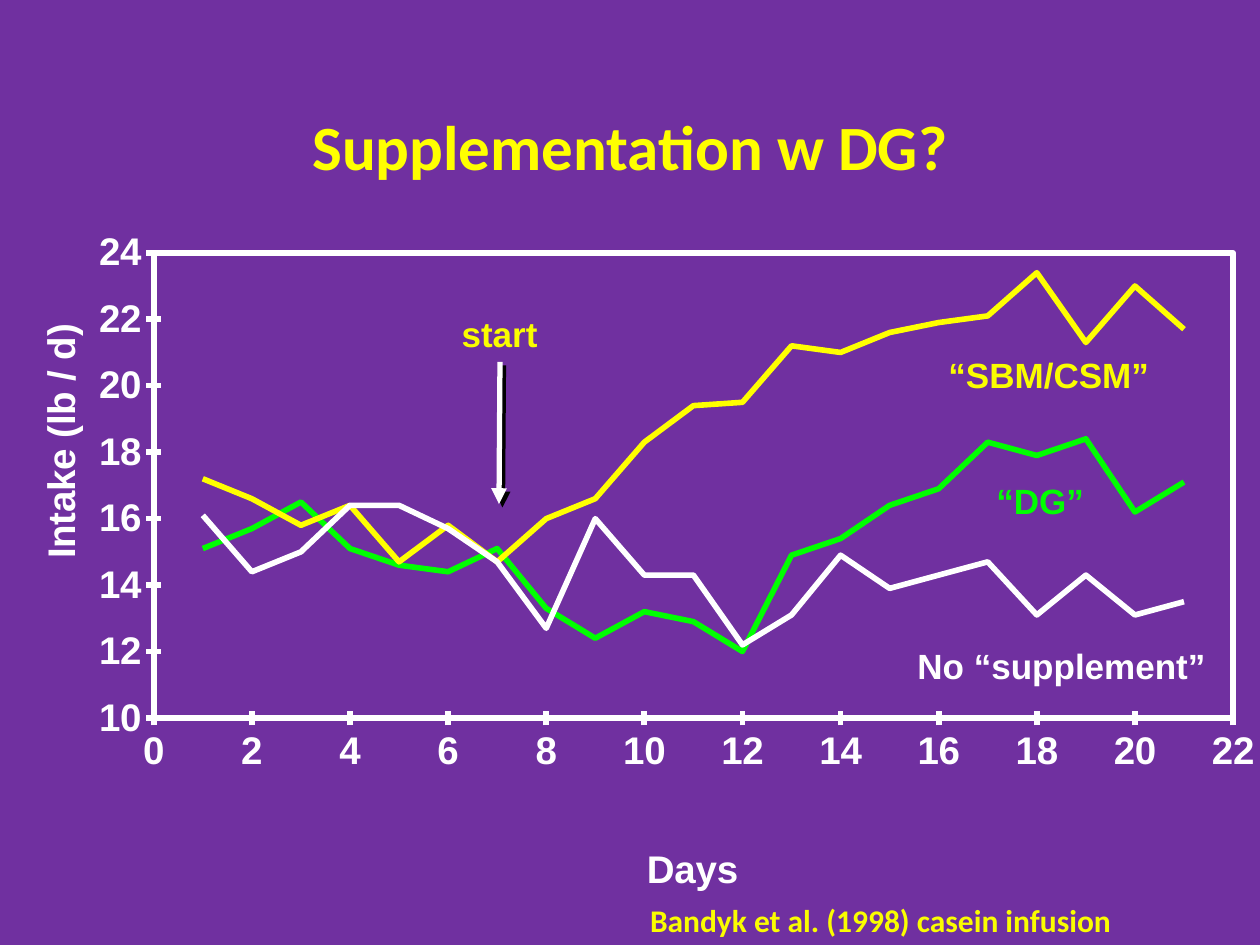
from lxml import etree
from pptx import Presentation
from pptx import util as u
from pptx.chart.data import XyChartData
from pptx.dml.color import RGBColor
from pptx.enum import chart as ch
from pptx.enum import shapes, text
from pptx.oxml import parse_xml
from pptx.oxml.ns import nsdecls, qn

PURPLE = RGBColor(0x70, 0x30, 0xA0)
WHITE = RGBColor(0xFF, 0xFF, 0xFF)
YELLOW = RGBColor(0xFF, 0xFF, 0x00)
GOLD = RGBColor(0xFA, 0xFD, 0x00)
GREEN = RGBColor(0x00, 0xFF, 0x00)

SCALE = u.Inches(1) / 126
LINE_WIDTH = u.Pt(3.2)
LEFT, CENTER, RIGHT = text.PP_ALIGN.LEFT, text.PP_ALIGN.CENTER, text.PP_ALIGN.RIGHT

TITLE = ("Supplementation w DG?", (0, 32, 1260, 157), CENTER, "Calibri", 36, YELLOW, True)
LABELS = [
    ("Bandyk et al. (1998) casein infusion", (0, 895, 1124, 50), RIGHT, "Calibri", 18, GOLD, False),
    ("“SBM/CSM”", (936, 347, 450, 54), LEFT, "Arial", 20, GOLD, True),
    ("“DG”", (984, 473, 203, 54), LEFT, "Arial", 20, GREEN, True),
    ("No “supplement”", (905, 638, 345, 55), LEFT, "Arial", 20, WHITE, True),
    ("start", (315, 306, 369, 55), CENTER, "Arial", 20, GOLD, True),
]
ARROW = (500, 362, 499, 504)
CHART_BOX = (-48, 193, 1336, 748)
PLOT_BOX = (154, 253, 1079, 465)
SERIES = [
    ("Series 1", WHITE, [16.1, 14.4, 15, 16.4, 16.4, 15.7, 14.7, 12.7, 16, 14.3, 14.3,
                         12.2, 13.1, 14.9, 13.9, 14.3, 14.7, 13.1, 14.3, 13.1, 13.5]),
    ("Series 2", YELLOW, [17.2, 16.6, 15.8, 16.4, 14.7, 15.8, 14.7, 16, 16.6, 18.3, 19.4,
                          19.5, 21.2, 21, 21.6, 21.9, 22.1, 23.4, 21.3, 23, 21.7]),
    ("Series 3", GREEN, [15.1, 15.7, 16.5, 15.1, 14.6, 14.4, 15.1, 13.3, 12.4, 13.2, 12.9,
                         12, 14.9, 15.4, 16.4, 16.9, 18.3, 17.9, 18.4, 16.2, 17.1]),
]
AXES = [("Days", 0, 22, (640, 838)), ("Intake (lb / d)", 10, 24, (30, 317))]


def px(*lengths):
    return [round(length * SCALE) for length in lengths]


def assign(target, values):
    for name, value in values.items():
        setattr(target, name, value)


def add_shadow(properties):
    properties.append(parse_xml(
        f'<a:effectLst {nsdecls("a")}><a:outerShdw dist="35921" dir="2700000" algn="ctr" rotWithShape="0">'
        '<a:srgbClr val="000000"/></a:outerShdw></a:effectLst>'))


def format_font(font, name, size, color):
    assign(font, {"size": u.Pt(size), "bold": True})
    font.color.rgb = color
    font.name = name


def write_text(shape, wording, box, align, font_name, size, color, shadowed):
    assign(shape, dict(zip(("left", "top", "width", "height"), px(*box))))
    frame = shape.text_frame
    assign(frame, {"word_wrap": True, "auto_size": text.MSO_AUTO_SIZE.NONE})
    paragraph = frame.paragraphs[0]
    assign(paragraph, {"alignment": align, "space_before": u.Pt(0)})
    run = paragraph.add_run()
    run.text = wording
    run.font.size = u.Pt(size)
    run.font.bold = True
    run.font.color.rgb = color
    if shadowed:
        add_shadow(run.font._element)
    run.font.name = font_name


def place_in_chart(parent, position, index, inner=False):
    left, top, width, height = CHART_BOX
    fractions = {"x": (position[0] - left) / width, "y": (position[1] - top) / height}
    if inner:
        fractions.update(w=position[2] / width, h=position[3] / height)
    for old in parent.findall(qn("c:layout")):
        parent.remove(old)
    layout = etree.Element(qn("c:layout"))
    manual = etree.SubElement(layout, qn("c:manualLayout"))
    if inner:
        etree.SubElement(manual, qn("c:layoutTarget"), val="inner")
    for side in ("x", "y"):
        etree.SubElement(manual, qn(f"c:{side}Mode"), val="edge")
    for name, fraction in fractions.items():
        etree.SubElement(manual, qn(f"c:{name}"), val=f"{fraction:.3f}")
    parent.insert(index, layout)


def add_intake_chart(slide):
    data = XyChartData()
    for name, _, intakes in SERIES:
        series = data.add_series(name)
        for day, intake in enumerate(intakes, 1):
            series.add_data_point(day, intake)
    chart = slide.shapes.add_chart(
        ch.XL_CHART_TYPE.XY_SCATTER_SMOOTH_NO_MARKERS, *px(*CHART_BOX), data).chart
    assign(chart, {"has_title": False, "has_legend": False})
    format_font(chart.font, "Arial", 22, WHITE)
    chart.plots[0].vary_by_categories = False
    for series, (_, color, _) in zip(chart.plots[0].series, SERIES):
        series.smooth = True
        series.marker.style = ch.XL_MARKER_STYLE.NONE
        series.format.line.color.rgb = color
        series.format.line.width = LINE_WIDTH
    for axis, (name, low, high, position) in zip((chart.category_axis, chart.value_axis), AXES):
        assign(axis, {"minimum_scale": low, "maximum_scale": high, "major_unit": 2,
                      "has_major_gridlines": False, "major_tick_mark": ch.XL_TICK_MARK.CROSS,
                      "minor_tick_mark": ch.XL_TICK_MARK.NONE})
        assign(axis.tick_labels, {"number_format": "General", "number_format_is_linked": False})
        format_font(axis.tick_labels.font, "Arial", 22, WHITE)
        axis.format.line.color.rgb = WHITE
        axis.format.line.width = LINE_WIDTH
        frame = axis.axis_title.text_frame
        frame.text = name
        format_font(frame.paragraphs[0].runs[0].font, "Arial", 22, WHITE)
        place_in_chart(axis.axis_title._element, position, 1)
    frame._txBody.find(qn("a:bodyPr")).attrib.update({"rot": "-5400000", "vert": "horz"})
    plot_area = chart._chartSpace.find(".//" + qn("c:plotArea"))
    place_in_chart(plot_area, PLOT_BOX, 0, inner=True)
    plot_area.append(parse_xml(
        f'<c:spPr {nsdecls("c", "a")}><a:noFill/><a:ln w="{LINE_WIDTH}"><a:solidFill>'
        f'<a:srgbClr val="{WHITE}"/></a:solidFill></a:ln></c:spPr>'))


def add_start_arrow(slide):
    arrow = slide.shapes.add_connector(shapes.MSO_CONNECTOR.STRAIGHT, *px(*ARROW))
    arrow.line.color.rgb = WHITE
    arrow.line.width = u.Pt(3)
    etree.SubElement(arrow.line._get_or_add_ln(), qn("a:tailEnd"), type="triangle")
    add_shadow(arrow._element.spPr)


def main():
    presentation = Presentation()
    assign(presentation, dict(zip(("slide_width", "slide_height"), px(1260, 945))))
    slide = presentation.slides.add_slide(presentation.slide_layouts[5])
    slide.background.fill.solid()
    slide.background.fill.fore_color.rgb = PURPLE
    add_intake_chart(slide)
    for label in LABELS:
        write_text(slide.shapes.add_textbox(0, 0, 0, 0), *label)
    add_start_arrow(slide)
    write_text(slide.shapes.title, *TITLE)
    slide.shapes.title.text_frame.vertical_anchor = text.MSO_ANCHOR.BOTTOM
    presentation.save("out.pptx")


if __name__ == "__main__":
    main()
